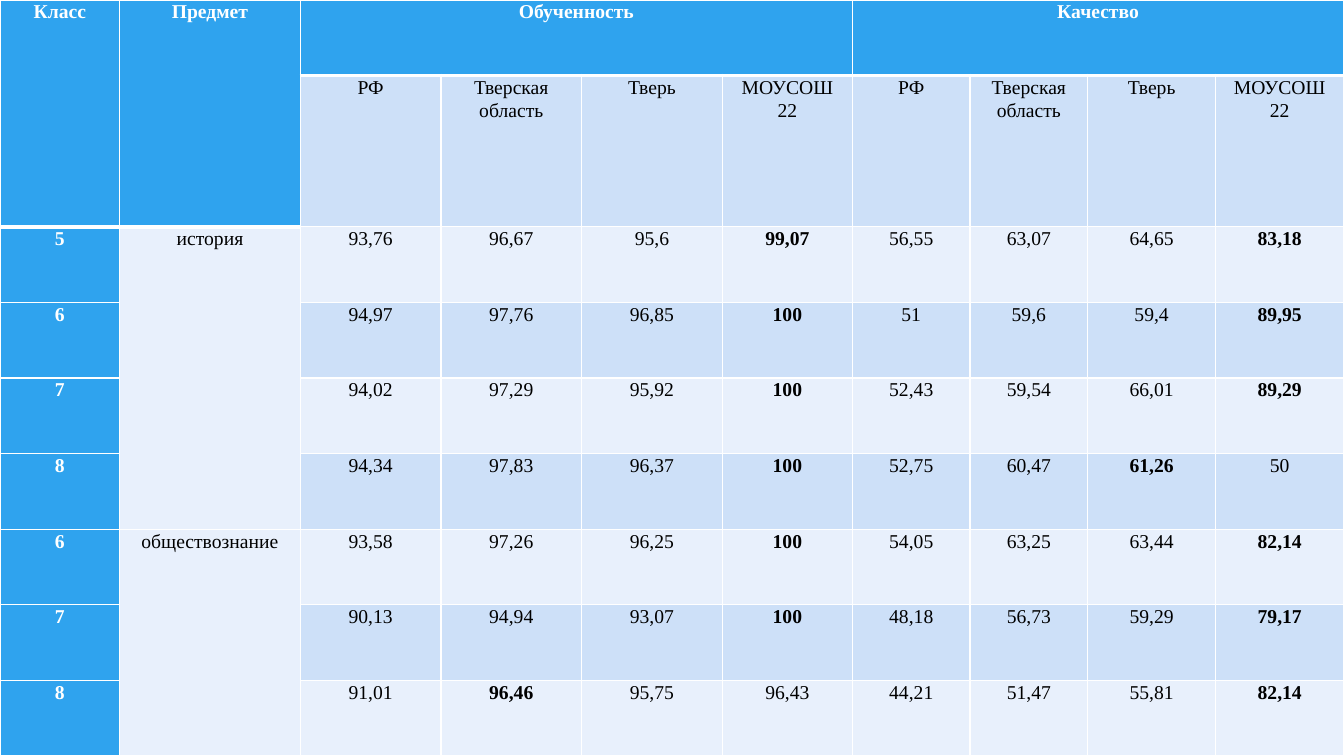
"""Build a slide with a table of school test results by class and subject."""
from lxml.etree import SubElement as Sub
from pptx import Presentation
from pptx.dml.color import RGBColor as Rgb
from pptx.enum.text import PP_ALIGN as Align
from pptx.oxml.ns import qn
from pptx.util import Pt

PX = 9525
THEME = {
    "head": "2FA3EE", "dark": "CDE0F8", "light": "E8F0FC", "white": "FFFFFF",
    "black": "000000", "grey": "B9B9B9", "font": "Times New Roman",
    "size": 14, "leading": 1.07, "thin": 1, "thick": 3,
}
COLUMNS = [114, 172, 134, 134, 134, 124, 112, 112, 122, 122]
ROWS = [72, 144] + [72] * 7
REGIONS = ["РФ", "Тверская область", "Тверь", "МОУСОШ\n22"]
RESULTS = [
    ["5", "история", "93,76", "96,67", "95,6", "99,07", "56,55", "63,07", "64,65", "83,18"],
    ["6", "", "94,97", "97,76", "96,85", "100", "51", "59,6", "59,4", "89,95"],
    ["7", "", "94,02", "97,29", "95,92", "100", "52,43", "59,54", "66,01", "89,29"],
    ["8", "", "94,34", "97,83", "96,37", "100", "52,75", "60,47", "61,26", "50"],
    ["6", "обществознание", "93,58", "97,26", "96,25", "100", "54,05", "63,25", "63,44", "82,14"],
    ["7", "", "90,13", "94,94", "93,07", "100", "48,18", "56,73", "59,29", "79,17"],
    ["8", "", "91,01", "96,46", "95,75", "96,43", "44,21", "51,47", "55,81", "82,14"],
]
GRID = [
    ["Класс", "Предмет", "Обученность", "", "", "", "Качество", "", "", ""],
    ["", ""] + REGIONS * 2,
] + RESULTS
MERGES = [(0, 0, 1, 0), (0, 1, 1, 1), (0, 2, 0, 5), (0, 6, 0, 9), (2, 1, 5, 1), (6, 1, 8, 1)]


def is_best(row, column):
    """Tell whether a result is the highest in its group of four regions."""
    if row < 2 or column < 2:
        return False
    start = 2 + (column - 2) // 4 * 4
    scores = [float(text.replace(",", ".")) for text in GRID[row][start:start + 4]]
    return scores[column - start] == max(scores)


def add_borders(cell, widths):
    """Give a cell white borders of the given widths in points."""
    properties = cell._tc.get_or_add_tcPr()
    for side, width in widths.items():
        line = Sub(properties, qn(f"a:ln{side}"), w=str(Pt(width)))
        Sub(Sub(line, qn("a:solidFill")), qn("a:srgbClr"), val=THEME["white"])


deck = Presentation()
deck.slide_width, deck.slide_height = sum(COLUMNS) * PX, sum(ROWS) * PX
page = deck.slides.add_slide(deck.slide_layouts[6])
backdrop = page.background.fill
backdrop.gradient()
backdrop.gradient_angle = 270
for stop, shade in zip(backdrop.gradient_stops, ("white", "grey")):
    stop.color.rgb = Rgb.from_string(THEME[shade])

frame = page.shapes.add_table(
    len(ROWS), len(COLUMNS), 0, 0, deck.slide_width, deck.slide_height)
table = frame.table
table.first_row = table.horz_banding = False
for column, width in zip(table.columns, COLUMNS):
    column.width = width * PX
for row, height in zip(table.rows, ROWS):
    row.height = height * PX
for top, left, bottom, right in MERGES:
    table.cell(top, left).merge(table.cell(bottom, right))

margins = {"margin_left": 4 * PX, "margin_right": 4 * PX, "margin_top": 0, "margin_bottom": 0}
for r, texts in enumerate(GRID):
    for c, text in enumerate(texts):
        cell = table.cell(r, c)
        heading = r == 0 or c == 0 or (r == 1 and c == 1)
        header_end = 1 if c < 2 else 0
        add_borders(cell, {
            "L": THEME["thin"],
            "R": THEME["thin"],
            "T": THEME["thick" if r == header_end + 1 else "thin"],
            "B": THEME["thick" if r <= header_end else "thin"],
        })
        shade = "head" if heading else "light" if c == 1 or r % 2 == 0 else "dark"
        cell.fill.solid()
        cell.fill.fore_color.rgb = Rgb.from_string(THEME[shade])
        for name, value in margins.items():
            setattr(cell, name, value)
        if cell.is_spanned:
            continue
        cell.text = text
        look = {"name": THEME["font"], "size": Pt(THEME["size"]), "bold": heading or is_best(r, c)}
        for para in cell.text_frame.paragraphs:
            para.alignment = Align.CENTER
            para.line_spacing = THEME["leading"]
            for span in para.runs:
                for name, value in look.items():
                    setattr(span.font, name, value)
                span.font.color.rgb = Rgb.from_string(THEME["white" if heading else "black"])

deck.save("out.pptx")
